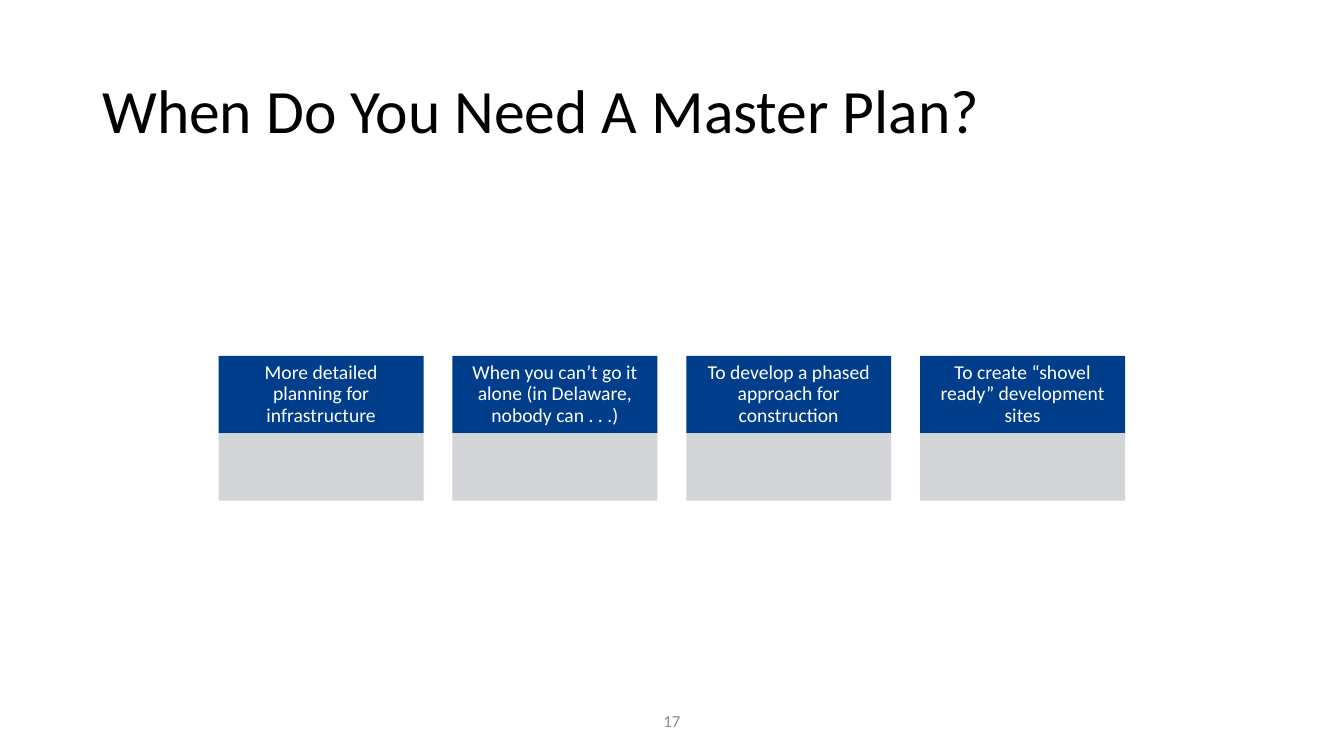
from dataclasses import dataclass

from lxml import etree
from pptx import Presentation
from pptx.dml.color import RGBColor
from pptx.enum import shapes, text
from pptx.oxml import ns
from pptx.util import Pt


@dataclass(frozen=True)
class Theme:
    font: str = "Calibri"
    title_size: int = 44
    card_size: int = 14
    number_size: int = 12
    black: str = "000000"
    white: str = "FFFFFF"
    blue: str = "003E8C"
    silver: str = "CFD1D4"
    gray: str = "8C8C8C"


THEME = Theme()

REASONS = [
    "More detailed planning for infrastructure",
    "When you can’t go it alone (in Delaware, nobody can . . .)",
    "To develop a phased approach for construction",
    "To create “shovel ready” development sites",
]

# Card row geometry, in points
ROW_LEFT, ROW_TOP = 156.2, 254.2
CARD_WIDTH, CARD_PITCH = 146.4, 167
HEADER_HEIGHT, BODY_HEIGHT = 55.2, 48.2


def write(shape, words, size, color, align, line_spacing=1.0, margins=(7.2, 3.6)):
    """Fill a shape with one vertically centred paragraph."""
    frame = shape.text_frame
    frame.word_wrap = True
    frame.vertical_anchor = text.MSO_ANCHOR.MIDDLE
    frame.margin_left = frame.margin_right = Pt(margins[0])
    frame.margin_top = frame.margin_bottom = Pt(margins[1])
    paragraph = frame.paragraphs[0]
    paragraph.text = words
    paragraph.alignment = align
    paragraph.line_spacing = line_spacing
    paragraph.font.name = THEME.font
    paragraph.font.size = Pt(size)
    paragraph.font.color.rgb = RGBColor.from_string(color)


def add_label(slide, box, words, size, color, align, line_spacing=1.0):
    label = slide.shapes.add_textbox(*map(Pt, box))
    write(label, words, size, color, align, line_spacing)


def add_block(slide, box, color, opacity=100):
    """Add a borderless rectangle, optionally see-through."""
    block = slide.shapes.add_shape(shapes.MSO_SHAPE.RECTANGLE, *map(Pt, box))
    block.shadow.inherit = False
    block.line.fill.background()
    block.fill.solid()
    block.fill.fore_color.rgb = RGBColor.from_string(color)
    if opacity < 100:
        fill_color = block.fill._xPr.find(ns.qn("a:solidFill"))[0]
        etree.SubElement(fill_color, ns.qn("a:alpha"), val=str(opacity * 1000))
    return block


def add_card(slide, left, reason):
    header = add_block(slide, (left, ROW_TOP, CARD_WIDTH, HEADER_HEIGHT), THEME.blue)
    write(header, reason, THEME.card_size, THEME.white, text.PP_ALIGN.CENTER,
          line_spacing=0.9, margins=(7.8, 4.5))
    add_block(slide, (left, ROW_TOP + HEADER_HEIGHT, CARD_WIDTH, BODY_HEIGHT),
              THEME.silver, opacity=90)


def main():
    deck = Presentation()
    deck.slide_width, deck.slide_height = Pt(960), Pt(540)
    slide = deck.slides.add_slide(deck.slide_layouts[6])

    # Title
    add_label(slide, (66, 28.8, 828, 104.4), "When Do You Need A Master Plan?",
              THEME.title_size, THEME.black, text.PP_ALIGN.LEFT, line_spacing=0.9)

    # Reason cards
    for index, reason in enumerate(REASONS):
        add_card(slide, ROW_LEFT + index * CARD_PITCH, reason)

    # Page number
    add_label(slide, (318, 500.5, 324, 28.8), "17",
              THEME.number_size, THEME.gray, text.PP_ALIGN.CENTER)

    deck.save("out.pptx")


if __name__ == "__main__":
    main()
